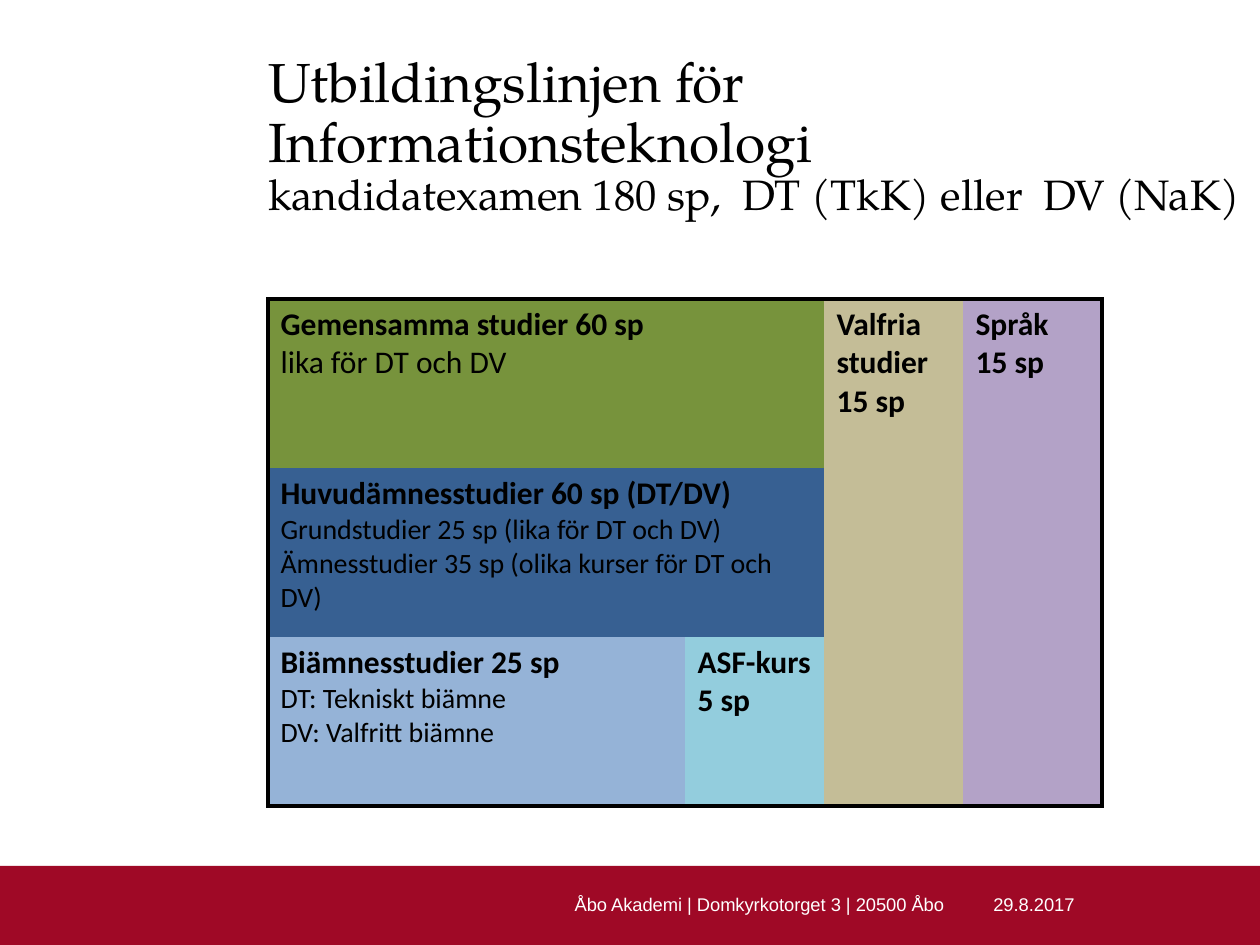
from dataclasses import dataclass

from lxml import etree
from pptx import Presentation
from pptx import util as u
from pptx.dml.color import RGBColor
from pptx.enum import shapes, text
from pptx.oxml import ns


@dataclass(frozen=True)
class Theme:
    black: str = "000000"
    white: str = "FFFFFF"
    red: str = "9F0926"
    green: str = "77933C"
    blue: str = "376092"
    pale: str = "95B3D7"
    aqua: str = "93CDDD"
    sand: str = "C4BD97"
    lilac: str = "B3A2C7"
    serif: str = "TeX Gyre Pagella"
    body: str = "Calibri"
    sans: str = "Arial"
    title: float = 31.5
    sub: float = 24.3
    head: float = 18
    note: float = 16
    foot: float = 10.5
    edge: float = 2.25


T = Theme()
PLAIN = "{2D5ABB26-0587-4C30-8999-92F81FD0307C}"


def px(n):
    return u.Emu(round(n * 914400 / 126))


def add_run(para, words, face, size, color, bold=False):
    run = para.add_run()
    run.text = words
    run.font.name = face
    run.font.size = u.Pt(size)
    run.font.bold = bold
    run.font.color.rgb = RGBColor.from_string(color)


def add_box(slide, *at):
    frame = slide.shapes.add_textbox(*map(px, at)).text_frame
    frame.word_wrap = True
    return frame


def add_band(slide):
    band = slide.shapes.add_shape(
        shapes.MSO_SHAPE.RECTANGLE, px(0), px(866), px(1260), px(79))
    band.shadow.inherit = False
    band.fill.solid()
    band.fill.fore_color.rgb = RGBColor.from_string(T.red)
    band.line.fill.background()


def add_title(slide):
    frame = add_box(slide, 268, 55, 992, 198)
    frame.margin_left = frame.margin_right = 0
    frame.margin_top = frame.margin_bottom = 0
    para = frame.paragraphs[0]
    para.line_spacing = 0.9
    add_run(para, "Utbildingslinjen för Informationsteknologi",
            T.serif, T.title, T.black)
    para.add_line_break()
    add_run(para, "kandidatexamen 180 sp,  DT (TkK) eller  DV (NaK)",
            T.serif, T.sub, T.black)


def add_foot(slide, left, width, words):
    frame = add_box(slide, left, 879, width, 50)
    frame.vertical_anchor = text.MSO_ANCHOR.MIDDLE
    para = frame.paragraphs[0]
    para.alignment = text.PP_ALIGN.RIGHT
    add_run(para, words, T.sans, T.foot, T.white)


def set_edge(cell, side, drawn):
    props = cell._tc.get_or_add_tcPr()
    line = etree.SubElement(props, ns.qn(f"a:ln{side}"))
    if drawn:
        line.set("w", str(u.Pt(T.edge)))
        fill = etree.SubElement(line, ns.qn("a:solidFill"))
        etree.SubElement(fill, ns.qn("a:srgbClr"), val=T.black)
    else:
        etree.SubElement(line, ns.qn("a:noFill"))


def frame_grid(grid):
    rows, cols = len(grid.rows), len(grid.columns)
    for r in range(rows):
        for c in range(cols):
            cell = grid.cell(r, c)
            high = cell.span_height if cell.is_merge_origin else 1
            wide = cell.span_width if cell.is_merge_origin else 1
            set_edge(cell, "L", c == 0)
            set_edge(cell, "R", c + wide == cols)
            set_edge(cell, "T", r == 0)
            set_edge(cell, "B", r + high == rows)


def fill_cell(cell, color, lines):
    cell.fill.solid()
    cell.fill.fore_color.rgb = RGBColor.from_string(color)
    frame = cell.text_frame
    for i, (words, size, bold) in enumerate(lines):
        para = frame.add_paragraph() if i else frame.paragraphs[0]
        add_run(para, words, T.body, size, T.black, bold)


def add_grid(slide):
    widths, high = (417, 139, 139, 139), 169
    grid = slide.shapes.add_table(
        3, 4, px(268), px(299), px(sum(widths)), px(3 * high)).table
    grid.first_row = grid.horz_banding = False
    grid._tbl.tblPr.find(ns.qn("a:tableStyleId")).text = PLAIN
    for col, wide in zip(grid.columns, widths):
        col.width = px(wide)
    for row in grid.rows:
        row.height = px(high)

    spans = [(0, 0, 0, 1), (1, 0, 1, 1), (0, 2, 2, 2), (0, 3, 2, 3)]
    for top, left, low, right in spans:
        grid.cell(top, left).merge(grid.cell(low, right))
    frame_grid(grid)

    cells = [
        (0, 0, T.green, [("Gemensamma studier 60 sp", T.head, True),
                         ("lika för DT och DV", T.head, False)]),
        (0, 2, T.sand, [("Valfria", T.head, True),
                        ("studier", T.head, True),
                        ("15 sp", T.head, True)]),
        (0, 3, T.lilac, [("Språk", T.head, True),
                         ("15 sp", T.head, True)]),
        (1, 0, T.blue, [
            ("Huvudämnesstudier 60 sp (DT/DV)", T.head, True),
            ("Grundstudier 25 sp (lika för DT och DV)", T.note, False),
            ("Ämnesstudier 35 sp (olika kurser för DT och DV)",
             T.note, False)]),
        (2, 0, T.pale, [("Biämnesstudier 25 sp", T.head, True),
                        ("DT: Tekniskt biämne", T.note, False),
                        ("DV: Valfritt biämne", T.note, False)]),
        (2, 1, T.aqua, [("ASF-kurs 5 sp", T.head, True)]),
    ]
    for r, c, color, lines in cells:
        fill_cell(grid.cell(r, c), color, lines)


def main():
    deck = Presentation()
    deck.slide_width, deck.slide_height = px(1260), px(945)
    slide = deck.slides.add_slide(deck.slide_layouts[6])
    add_band(slide)
    add_title(slide)
    add_grid(slide)
    add_foot(slide, 461, 496, "Åbo Akademi | Domkyrkotorget 3 | 20500 Åbo")
    add_foot(slide, 978, 109, "29.8.2017")
    deck.save("out.pptx")


if __name__ == "__main__":
    main()
